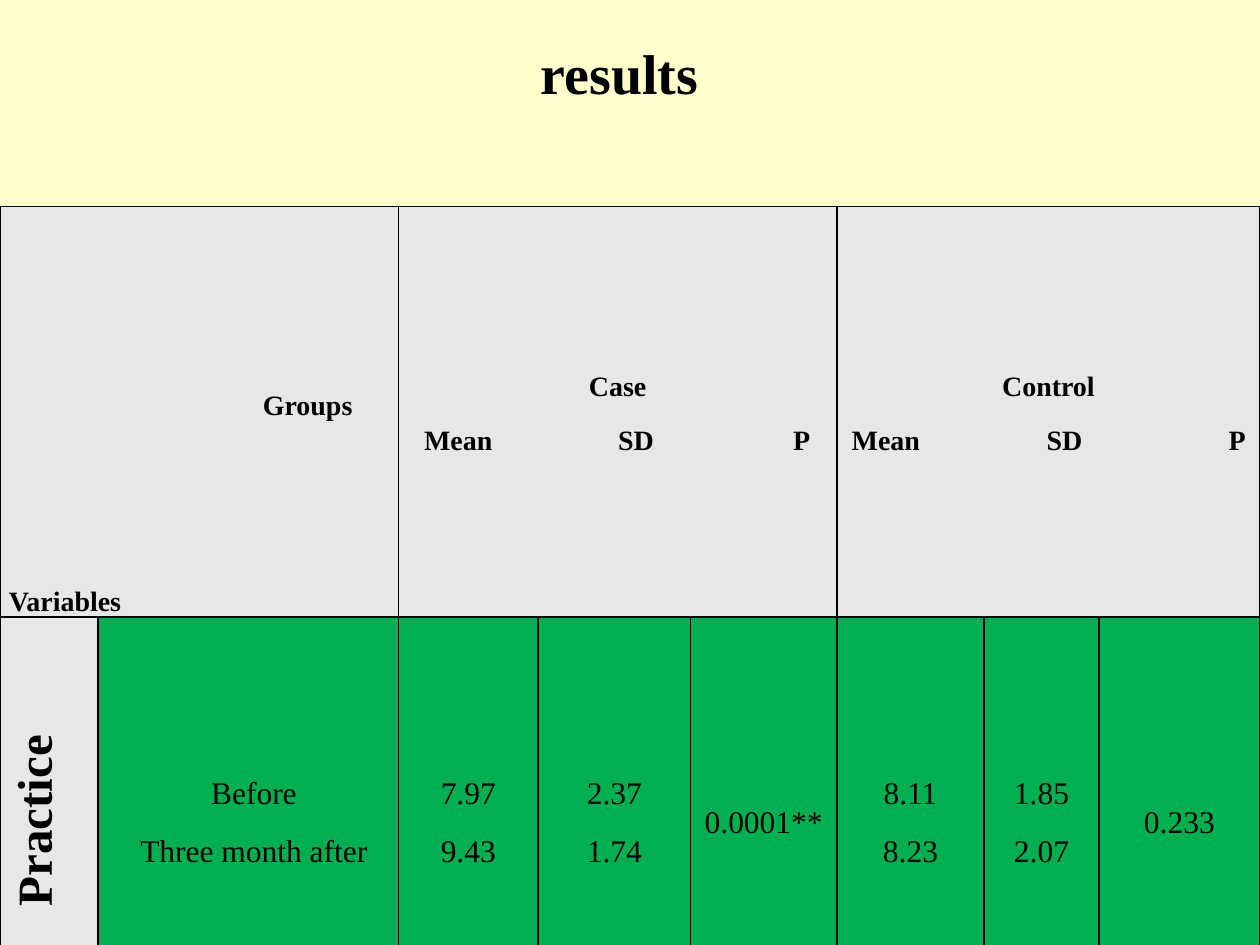
import pptx
import pptx.util
import pptx.dml.color
import pptx.enum.text
from pptx.oxml.ns import qn
from lxml import etree

Cm, Pt = pptx.util.Cm, pptx.util.Pt
ALIGN = pptx.enum.text.PP_ALIGN
ANCHOR = pptx.enum.text.MSO_ANCHOR

# Content
TITLE = "results"
CORNER = ("Groups", "Variables")
# first column, group name, tab stops (cm) of the three measure names
GROUPS = [(2, "Case", (0.34, 4.25, 7.78)),
          (5, "Control", (0.12, 4.05, 7.72))]
MEASURES = ("Mean", "SD", "P")
SIDE_LABEL = "Practice"
VALUES = [("Before", "Three month after"),
          ("7.97", "9.43"), ("2.37", "1.74"), ("0.0001**",),
          ("8.11", "8.23"), ("1.85", "2.07"), ("0.233",)]

# Look
FONT = "Times New Roman"
COLORS = {"page": "FFFFCC", "text": "000000", "line": "000000",
          "head": "E7E7E7", "body": "00B050"}
COLUMNS = (1.98, 6.05, 2.82, 3.07, 2.95, 2.97, 2.31, 3.25)
ROWS = (8.28, 8.2)
TABLE_TOP = 4.16


def rgb(name):
    return pptx.dml.color.RGBColor.from_string(COLORS[name])


def add_span(para, text, size, bold):
    span = para.add_run()
    span.text = text
    span.font.name = FONT
    span.font.size = Pt(size)
    span.font.bold = bold
    span.font.color.rgb = rgb("text")


def add_border(cell):
    props = cell._tc.get_or_add_tcPr()
    for side in ("lnL", "lnR", "lnT", "lnB"):
        line = etree.SubElement(props, qn("a:" + side), w=str(Pt(1)))
        fill = etree.SubElement(line, qn("a:solidFill"))
        etree.SubElement(fill, qn("a:srgbClr"), val=COLORS["line"])


def add_tabs(para, stops):
    tabs = etree.SubElement(para._p.get_or_add_pPr(), qn("a:tabLst"))
    for stop in stops:
        etree.SubElement(tabs, qn("a:tab"), pos=str(Cm(stop)), algn="l")


def write_cell(cell, lines, size, bold, fill):
    cell.fill.solid()
    cell.fill.fore_color.rgb = rgb(fill)
    cell.margin_left = cell.margin_right = Cm(0.18)
    cell.margin_top = cell.margin_bottom = 0
    cell.vertical_anchor = ANCHOR.MIDDLE
    frame = cell.text_frame
    for index, text in enumerate(lines):
        para = frame.add_paragraph() if index else frame.paragraphs[0]
        para.alignment = ALIGN.CENTER
        para.line_spacing = 1.15
        para.space_after = Pt(10)
        add_span(para, text, size, bold)
    return frame.paragraphs


deck = pptx.Presentation()
deck.slide_width, deck.slide_height = Cm(25.4), Cm(19.05)
page = deck.slides.add_slide(deck.slide_layouts[5])
page.background.fill.solid()
page.background.fill.fore_color.rgb = rgb("page")

# Title
title = page.shapes.title
title.left, title.top, title.width, title.height = Cm(1.96), Cm(0.61), Cm(21.06), Cm(1.65)
title.text_frame.vertical_anchor = ANCHOR.BOTTOM
title_para = title.text_frame.paragraphs[0]
title_para.alignment = ALIGN.CENTER
add_span(title_para, TITLE, 32, True)

# Table grid
table = page.shapes.add_table(len(ROWS), len(COLUMNS), 0, Cm(TABLE_TOP),
                              Cm(sum(COLUMNS)), Cm(sum(ROWS))).table
table.first_row = table.horz_banding = False
for column, width in zip(table.columns, COLUMNS):
    column.width = Cm(width)
for row, height in zip(table.rows, ROWS):
    row.height = Cm(height)
for cell in table.iter_cells():
    add_border(cell)

# Corner cell
corner = table.cell(0, 0)
corner.merge(table.cell(0, 1))
groups, variables = write_cell(corner, CORNER, 16, True, "head")
corner.vertical_anchor = ANCHOR.BOTTOM
groups.alignment = variables.alignment = ALIGN.LEFT
groups._p.get_or_add_pPr().set("marL", str(Cm(5.12)))
groups.space_after = variables.space_after = Pt(0)
variables.space_before = Pt(91)

# Group headings
for first, name, stops in GROUPS:
    heading = table.cell(0, first)
    heading.merge(table.cell(0, first + 2))
    measures = "".join("\t" + measure for measure in MEASURES)
    para = write_cell(heading, (name, measures), 16, True, "head")[1]
    para.alignment = ALIGN.LEFT
    add_tabs(para, stops)

# Practice row
side = table.cell(1, 0)
write_cell(side, (SIDE_LABEL,), 28, True, "head")
side._tc.get_or_add_tcPr().set("vert", "vert270")
for column, lines in enumerate(VALUES, start=1):
    paras = write_cell(table.cell(1, column), lines, 18, False, "body")
    if column == 1:
        for para in paras:
            para._p.get_or_add_pPr().set("marL", str(Cm(0.23)))

deck.save("out.pptx")
